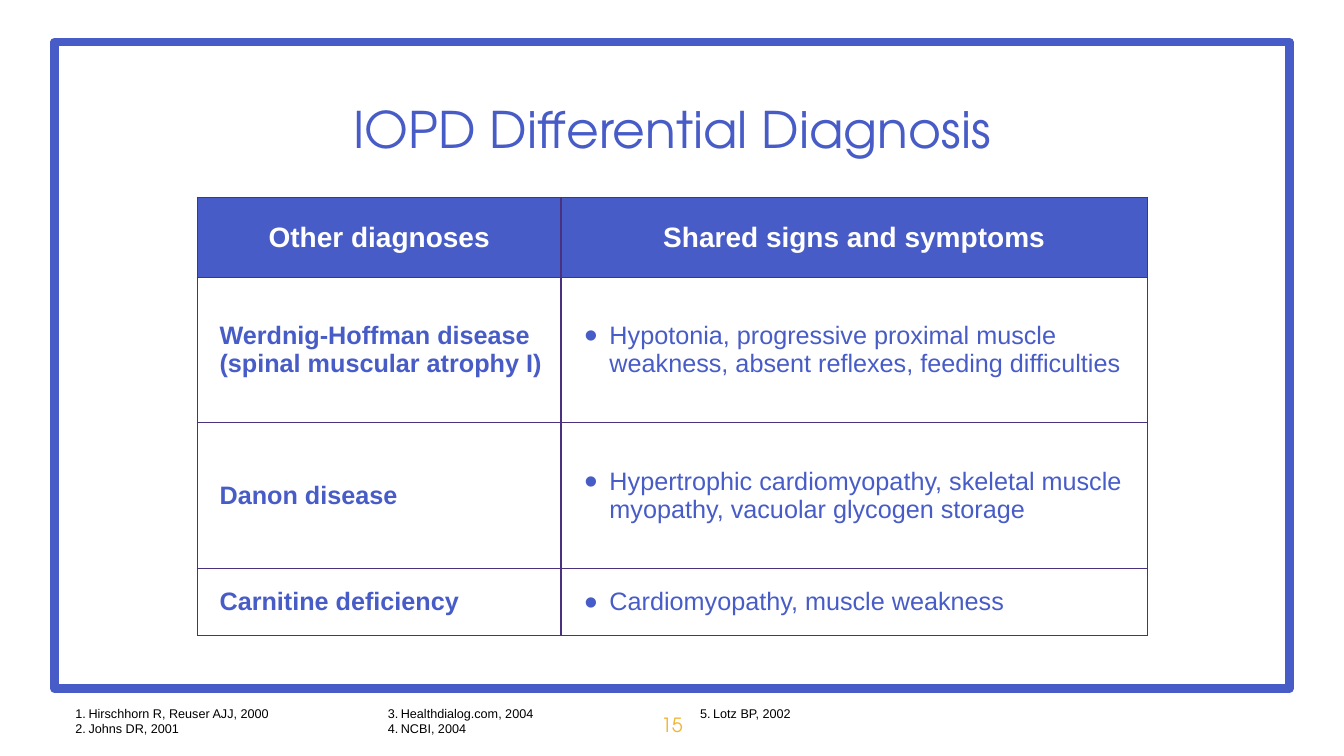
from dataclasses import dataclass

from lxml.etree import SubElement
from pptx import Presentation
from pptx.dml.color import RGBColor
from pptx.enum.shapes import MSO_SHAPE
from pptx.enum.text import MSO_ANCHOR, MSO_AUTO_SIZE, PP_ALIGN
from pptx.oxml.ns import qn
from pptx.util import Inches, Pt

GRID_COLUMNS, GRID_ROWS = 160, 90
SLIDE_WIDTH, SLIDE_HEIGHT = Inches(13.33), Inches(7.5)
BLUE, PURPLE, GOLD, WHITE, BLACK = "485CC7", "4A317D", "F1B434", "FFFFFF", "000000"
HEADING_FONT, BODY_FONT = "TeX Gyre Adventor", "Arial"


@dataclass(frozen=True)
class Area:
    column: float
    row: float
    columns: float
    rows: float

    def box(self) -> tuple[int, int, int, int]:
        return across(self.column), down(self.row), across(self.columns), down(self.rows)


@dataclass(frozen=True)
class TextStyle:
    font: str
    size: float
    color: str
    bold: bool = False
    alignment: PP_ALIGN = PP_ALIGN.LEFT


@dataclass(frozen=True)
class Diagnosis:
    name: str
    symptoms: str
    rows: float


FRAME = Area(6.5, 5, 147, 77)
TITLE = Area(6.5, 8, 147, 14.6)
TABLE = Area(23.5, 23.5, 113.1, 52.2)
PAGE_NUMBER = Area(76.5, 84.5, 7, 3.6)
REFERENCE_LIST = Area(7.8, 83.4, 113.9, 4.8)

TITLE_STYLE = TextStyle(HEADING_FONT, 36, BLUE, alignment=PP_ALIGN.CENTER)
NUMBER_STYLE = TextStyle(HEADING_FONT, 14, GOLD, alignment=PP_ALIGN.CENTER)
HEADER_STYLE = TextStyle(BODY_FONT, 20, WHITE, True, PP_ALIGN.CENTER)
NAME_STYLE = TextStyle(BODY_FONT, 18, BLUE, True)
SYMPTOM_STYLE = TextStyle(BODY_FONT, 18, BLUE)
REFERENCE_STYLE = TextStyle(BODY_FONT, 9, BLACK)

HEADERS = ("Other diagnoses", "Shared signs and symptoms")
HEADER_ROWS = 9.5
TABLE_COLUMNS = (43.3, 69.8)
DIAGNOSES = (
    Diagnosis(
        "Werdnig-Hoffman disease (spinal muscular atrophy I)",
        "Hypotonia, progressive proximal muscle weakness, absent reflexes, feeding difficulties",
        17.3,
    ),
    Diagnosis(
        "Danon disease",
        "Hypertrophic cardiomyopathy, skeletal muscle myopathy, vacuolar glycogen storage",
        17.4,
    ),
    Diagnosis("Carnitine deficiency", "Cardiomyopathy, muscle weakness", 8),
)
REFERENCES = (
    "Hirschhorn R, Reuser AJJ, 2000",
    "Johns DR, 2001",
    "Healthdialog.com, 2004",
    "NCBI, 2004",
    "Lotz BP, 2002",
)


def across(columns: float) -> int:
    return round(SLIDE_WIDTH * columns / GRID_COLUMNS)


def down(rows: float) -> int:
    return round(SLIDE_HEIGHT * rows / GRID_ROWS)


def rgb(color: str) -> RGBColor:
    return RGBColor.from_string(color)


def write(paragraph, text: str, style: TextStyle) -> None:
    paragraph.text = text
    paragraph.alignment = style.alignment
    font = paragraph.font
    font.name, font.size, font.bold = style.font, Pt(style.size), style.bold
    font.color.rgb = rgb(style.color)


def indent(paragraph, margin: float, first_line: float = 0):
    properties = paragraph._p.get_or_add_pPr()
    properties.set("marL", str(Inches(margin)))
    properties.set("indent", str(Inches(first_line)))
    return properties


def add_bullet(paragraph) -> None:
    properties = indent(paragraph, 0.38, -0.25)
    SubElement(properties, qn("a:buSzPct"), val="150000")
    SubElement(properties, qn("a:buFont"), typeface=BODY_FONT)
    SubElement(properties, qn("a:buChar"), char="•")


def add_number(paragraph) -> None:
    properties = indent(paragraph, 0.13, -0.13)
    SubElement(properties, qn("a:buFont"), typeface=BODY_FONT)
    SubElement(properties, qn("a:buAutoNum"), type="arabicPeriod")


def add_text_frame(slide, area: Area):
    text_frame = slide.shapes.add_textbox(*area.box()).text_frame
    text_frame.word_wrap = True
    return text_frame


def add_label(slide, area: Area, text: str, style: TextStyle) -> None:
    text_frame = add_text_frame(slide, area)
    text_frame.vertical_anchor = MSO_ANCHOR.MIDDLE
    write(text_frame.paragraphs[0], text, style)


def add_frame(slide) -> None:
    shape = slide.shapes.add_shape(MSO_SHAPE.RECTANGLE, *FRAME.box())
    shape.shadow.inherit = False
    shape.fill.background()
    shape.line.color.rgb = rgb(BLUE)
    shape.line.width = Pt(6)
    SubElement(shape.line._get_or_add_ln(), qn("a:round"))


def add_borders(cell) -> None:
    properties = cell._tc.get_or_add_tcPr()
    for side in ("lnL", "lnR", "lnT", "lnB"):
        border = SubElement(properties, qn(f"a:{side}"), w=str(Pt(1)))
        fill = SubElement(border, qn("a:solidFill"))
        SubElement(fill, qn("a:srgbClr"), val=PURPLE)


def fill_cell(cell, text: str, style: TextStyle, color: str = ""):
    add_borders(cell)
    cell.vertical_anchor = MSO_ANCHOR.MIDDLE
    if color:
        cell.fill.solid()
        cell.fill.fore_color.rgb = rgb(color)
    else:
        cell.fill.background()
    paragraph = cell.text_frame.paragraphs[0]
    if style is SYMPTOM_STYLE:
        add_bullet(paragraph)
    elif style is NAME_STYLE:
        indent(paragraph, 0.12)
    write(paragraph, text, style)


def add_diagnosis_table(slide) -> None:
    table = slide.shapes.add_table(len(DIAGNOSES) + 1, len(HEADERS), *TABLE.box()).table
    table.first_row = table.horz_banding = False
    for column, width in zip(table.columns, TABLE_COLUMNS):
        column.width = across(width)
    table.rows[0].height = down(HEADER_ROWS)
    for index, header in enumerate(HEADERS):
        fill_cell(table.cell(0, index), header, HEADER_STYLE, BLUE)
    for index, diagnosis in enumerate(DIAGNOSES, start=1):
        table.rows[index].height = down(diagnosis.rows)
        fill_cell(table.cell(index, 0), diagnosis.name, NAME_STYLE)
        fill_cell(table.cell(index, 1), diagnosis.symptoms, SYMPTOM_STYLE)


def add_references(slide) -> None:
    text_frame = add_text_frame(slide, REFERENCE_LIST)
    text_frame.auto_size = MSO_AUTO_SIZE.SHAPE_TO_FIT_TEXT
    text_frame._txBody.bodyPr.set("numCol", "3")
    for index, reference in enumerate(REFERENCES):
        paragraph = text_frame.add_paragraph() if index else text_frame.paragraphs[0]
        add_number(paragraph)
        write(paragraph, reference, REFERENCE_STYLE)


def main() -> None:
    presentation = Presentation()
    presentation.slide_width, presentation.slide_height = SLIDE_WIDTH, SLIDE_HEIGHT
    slide = presentation.slides.add_slide(presentation.slide_layouts[6])
    add_frame(slide)
    add_label(slide, PAGE_NUMBER, "15", NUMBER_STYLE)
    add_label(slide, TITLE, "IOPD Differential Diagnosis", TITLE_STYLE)
    add_diagnosis_table(slide)
    add_references(slide)
    presentation.save("out.pptx")


if __name__ == "__main__":
    main()
